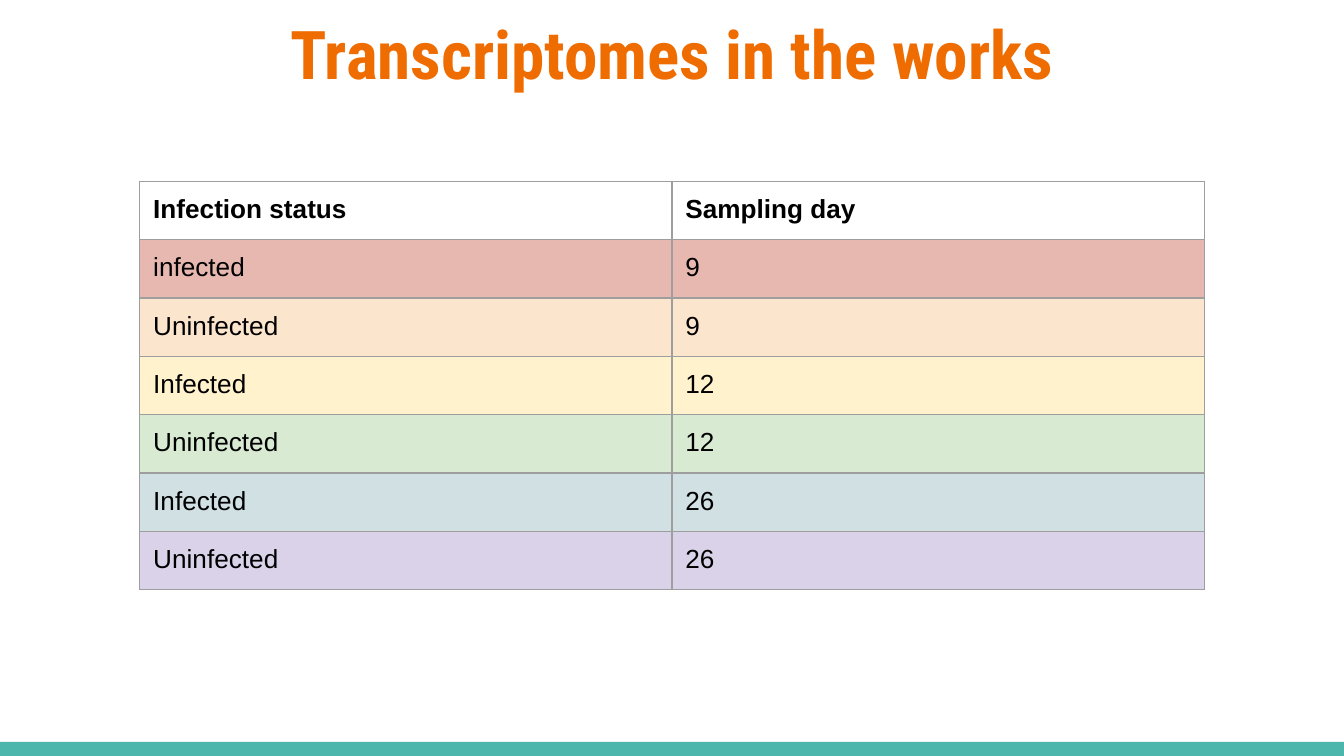
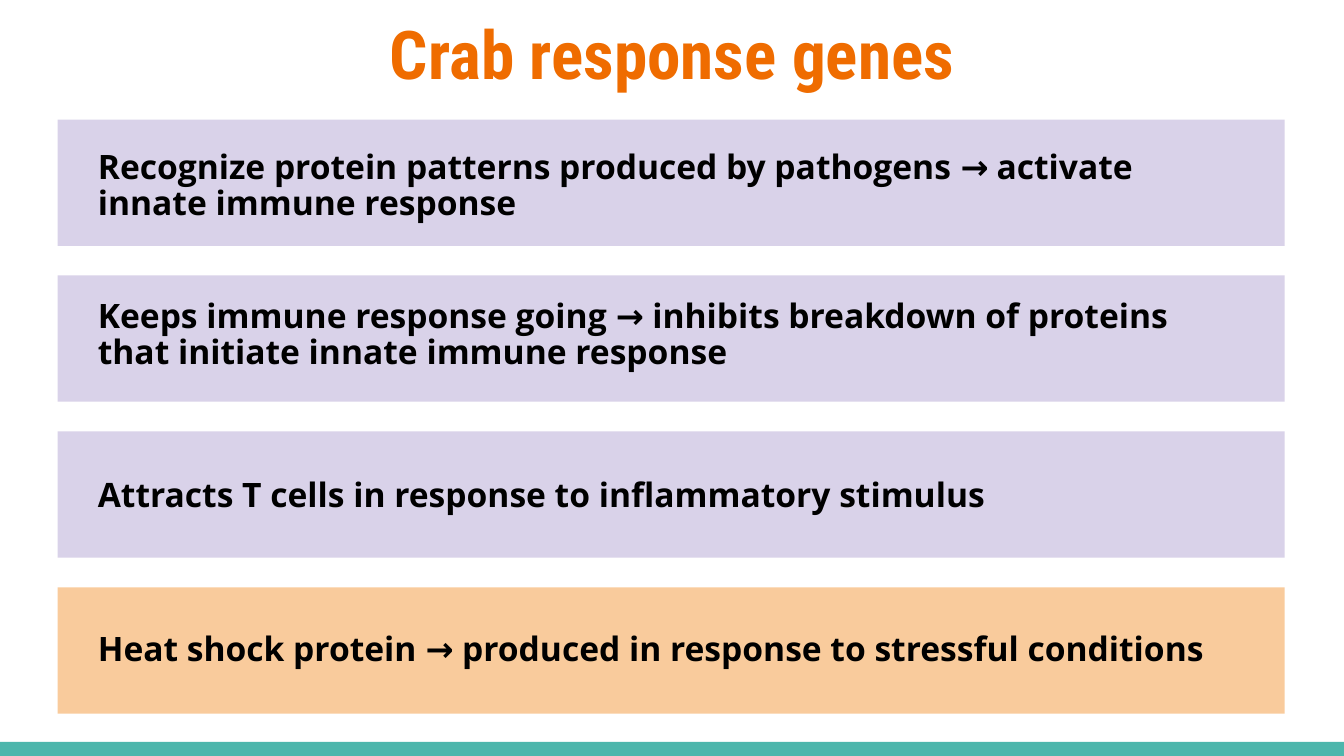
import pptx
import pptx.util
import pptx.dml.color
import pptx.enum.shapes
import pptx.enum.text
import pptx.oxml
import pptx.oxml.ns

WIDTH = pptx.util.Inches(10)
HEIGHT = WIDTH * 9 // 16
INSET = pptx.util.Inches(0.1)

COLORS = {
    "title": "EF6C00",
    "footer": "4DB6AC",
    "text": "000000",
    "border": "9E9E9E",
    "red": "E6B8AF",
    "peach": "FCE5CD",
    "yellow": "FFF2CC",
    "green": "D9EAD3",
    "blue": "D0E0E3",
    "purple": "D9D2E9",
    "orange": "F9CB9C",
}

TOP = pptx.enum.text.MSO_ANCHOR.TOP
MIDDLE = pptx.enum.text.MSO_ANCHOR.MIDDLE
LEFT = pptx.enum.text.PP_ALIGN.LEFT
CENTER = pptx.enum.text.PP_ALIGN.CENTER

SAMPLES = [
    ("Infection status", "Sampling day", None),
    ("infected", "9", "red"),
    ("Uninfected", "9", "peach"),
    ("Infected", "12", "yellow"),
    ("Uninfected", "12", "green"),
    ("Infected", "26", "blue"),
    ("Uninfected", "26", "purple"),
]

# Text, band colour, drop of the text below the band's top, anchor, line spacing
GENE_ROLES = [
    ("Recognize protein patterns produced by pathogens → activate innate immune response",
     "purple", 2.31, TOP, 0.9),
    ("Keeps immune response going → inhibits breakdown of proteins "
     "that initiate innate immune response",
     "purple", 1.42, TOP, 0.9),
    ("Attracts T cells in response to inflammatory stimulus",
     "purple", 1.42, MIDDLE, 1.0),
    ("Heat shock protein → produced in response to stressful conditions",
     "orange", 1.24, MIDDLE, 1.0),
]


def rgb(color):
    return pptx.dml.color.RGBColor.from_string(COLORS[color])


def place(left, top, width, height):
    """Turn percentages of the slide into lengths."""
    return (round(WIDTH * left / 100), round(HEIGHT * top / 100),
            round(WIDTH * width / 100), round(HEIGHT * height / 100))


def write(paragraph, text, font, size, color="text", bold=True):
    run = paragraph.add_run()
    run.text = text
    run.font.name = font
    run.font.size = pptx.util.Pt(size)
    run.font.bold = bold
    run.font.color.rgb = rgb(color)


def set_insets(holder):
    holder.margin_left = holder.margin_right = INSET
    holder.margin_top = holder.margin_bottom = INSET


def add_band(slide, area, color):
    band = slide.shapes.add_shape(
        pptx.enum.shapes.MSO_SHAPE.RECTANGLE, *place(*area))
    band.shadow.inherit = False
    band.fill.solid()
    band.fill.fore_color.rgb = rgb(color)
    band.line.fill.background()


def add_text(slide, area, text, font, size, color="text",
             align=LEFT, anchor=TOP, spacing=1.0):
    frame = slide.shapes.add_textbox(*place(*area)).text_frame
    frame.word_wrap = True
    frame.vertical_anchor = anchor
    set_insets(frame)
    paragraph = frame.paragraphs[0]
    paragraph.alignment = align
    paragraph.line_spacing = spacing
    write(paragraph, text, font, size, color)


def add_titled_slide(deck, title):
    slide = deck.slides.add_slide(deck.slide_layouts[6])
    add_band(slide, (0, 98.13, 100, 1.87), "footer")
    add_text(slide, (3.4, -0.18, 93.2, 13.69), title,
             "Roboto Condensed", 36, "title", CENTER)
    return slide


def add_borders(cell):
    properties = cell._tc.get_or_add_tcPr()
    for index, side in enumerate("LRTB"):
        properties.insert(index, pptx.oxml.parse_xml(
            f'<a:ln{side} {pptx.oxml.ns.nsdecls("a")} w="{pptx.util.Pt(0.75)}">'
            f'<a:solidFill><a:srgbClr val="{COLORS["border"]}"/></a:solidFill>'
            f'</a:ln{side}>'))


def add_sample_table(slide):
    row_share = 7.47
    area = place(10.4, 24, 79.2, row_share * len(SAMPLES))
    table = slide.shapes.add_table(len(SAMPLES), 2, *area).table
    table.first_row = table.horz_banding = False
    for row, (status, day, color) in enumerate(SAMPLES):
        for column, text in enumerate((status, day)):
            cell = table.cell(row, column)
            set_insets(cell)
            if color:
                cell.fill.solid()
                cell.fill.fore_color.rgb = rgb(color)
            else:
                cell.fill.background()
            add_borders(cell)
            write(cell.text_frame.paragraphs[0], text, "Arial", 14, bold=row == 0)


def add_gene_roles(slide):
    first_top, pitch = 15.82, 20.62
    tops = [first_top + pitch * row for row in range(len(GENE_ROLES))]
    for top, (_, color, *_) in zip(tops, GENE_ROLES):
        add_band(slide, (4.3, top, 91.3, 16.71), color)
    for top, (text, _, drop, anchor, spacing) in zip(tops, GENE_ROLES):
        add_text(slide, (6.3, top + drop, 87.3, 13.69), text,
                 "Open Sans", 18, anchor=anchor, spacing=spacing)


def main():
    deck = pptx.Presentation()
    deck.slide_width, deck.slide_height = WIDTH, HEIGHT
    add_sample_table(add_titled_slide(deck, "Transcriptomes in the works"))
    add_gene_roles(add_titled_slide(deck, "Crab response genes"))
    deck.save("out.pptx")


if __name__ == "__main__":
    main()
